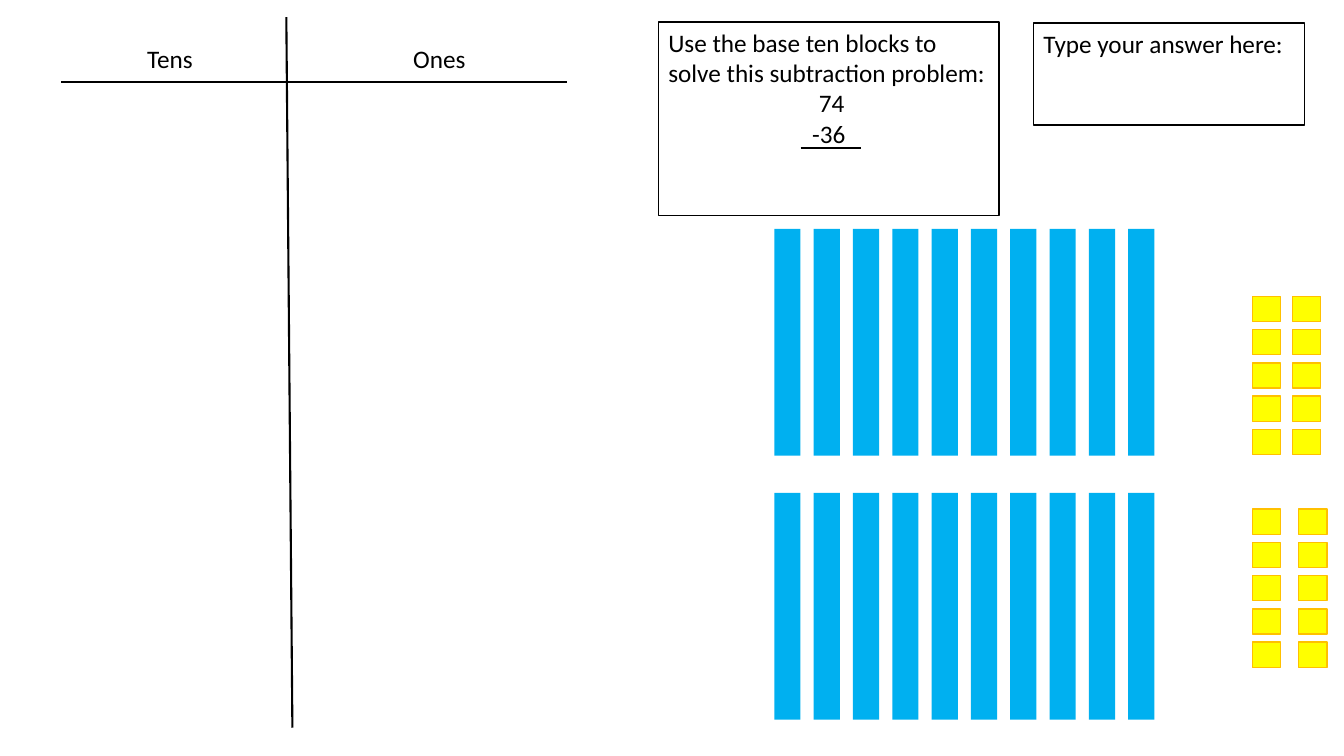
from lxml.etree import SubElement
from pptx import Presentation
from pptx.dml.color import RGBColor
from pptx.enum.shapes import MSO_CONNECTOR, MSO_SHAPE
from pptx.enum.text import MSO_ANCHOR, PP_ALIGN
from pptx.oxml.ns import qn
from pptx.util import Emu, Pt

BLACK = "000000"
WHITE = "FFFFFF"
ROD_BLUE = "00B0F0"
CUBE_YELLOW = "FFFF00"
CUBE_EDGE = "FFC000"


def px(length):
    """Convert px, at 100 to the inch, to EMU."""
    return Emu(length * 9144)


def color(hex_string):
    return RGBColor.from_string(hex_string)


def add_line(slide, start, end, points):
    line = slide.shapes.add_connector(
        MSO_CONNECTOR.STRAIGHT, *map(px, (*start, *end)))
    line.line.color.rgb = color(BLACK)
    line.line.width = Pt(points)
    SubElement(line._element.spPr, qn("a:effectLst"))


def add_rectangle(slide, box, fill, edge=None):
    shape = slide.shapes.add_shape(MSO_SHAPE.RECTANGLE, *map(px, box))
    shape.shadow.inherit = False
    shape.fill.solid()
    shape.fill.fore_color.rgb = color(fill)
    if edge:
        shape.line.color.rgb = color(edge)
        shape.line.width = Pt(1)
    else:
        shape.line.fill.background()
    return shape


def write(shape, *lines):
    """Fill the shape with (text, alignment) paragraphs."""
    frame = shape.text_frame
    frame.word_wrap = True
    frame.vertical_anchor = MSO_ANCHOR.TOP
    for index, (text, alignment) in enumerate(lines):
        paragraph = frame.add_paragraph() if index else frame.paragraphs[0]
        paragraph.text = text
        paragraph.alignment = alignment
        paragraph.font.name = "Calibri"
        paragraph.font.size = Pt(18)
        paragraph.font.color.rgb = color(BLACK)


def add_place_value_chart(slide, left, top, width, height):
    header_bottom = top + 64
    add_line(slide, (left, header_bottom), (left + width, header_bottom), 1.5)
    add_line(slide, (left + 223, top), (left + 229, top + height), 1.5)
    for heading, offset in (("Tens", 75), ("Ones", 339)):
        label = slide.shapes.add_textbox(
            *map(px, (left + offset, top + 21, 131, 40)))
        write(label, (heading, PP_ALIGN.LEFT))


def add_problem(slide, left, top, width, height):
    shape = add_rectangle(slide, (left, top, width, height), WHITE, BLACK)
    write(shape,
          ("Use the base ten blocks to solve this subtraction problem:",
           PP_ALIGN.LEFT),
          (" 74", PP_ALIGN.CENTER),
          ("-36", PP_ALIGN.CENTER))
    add_line(slide, (left + 141, top + 125), (left + 201, top + 125), 1)


def add_answer_box(slide, left, top, width, height):
    shape = add_rectangle(slide, (left, top, width, height), WHITE, BLACK)
    write(shape, ("Type your answer here:", PP_ALIGN.LEFT))


def add_tens_rods(slide, left, top):
    for column in range(10):
        add_rectangle(slide, (left + 39 * column, top, 26, 225), ROD_BLUE)


def add_ones_cubes(slide, left, top, column_pitch):
    for row in range(5):
        for column in range(2):
            box = (left + column_pitch * column, top + 33 * row, 28, 25)
            add_rectangle(slide, box, CUBE_YELLOW, CUBE_EDGE)


def main():
    presentation = Presentation()
    presentation.slide_width = px(1333)
    presentation.slide_height = px(750)
    slide = presentation.slides.add_slide(presentation.slide_layouts[6])
    add_place_value_chart(slide, 61, 17, 501, 705)
    add_problem(slide, 653, 22, 338, 192)
    add_answer_box(slide, 1025, 23, 269, 101)
    for rods_top in (227, 489):
        add_tens_rods(slide, 768, rods_top)
    add_ones_cubes(slide, 1242, 294, column_pitch=40)
    add_ones_cubes(slide, 1242, 505, column_pitch=46)
    presentation.save("out.pptx")


if __name__ == "__main__":
    main()
